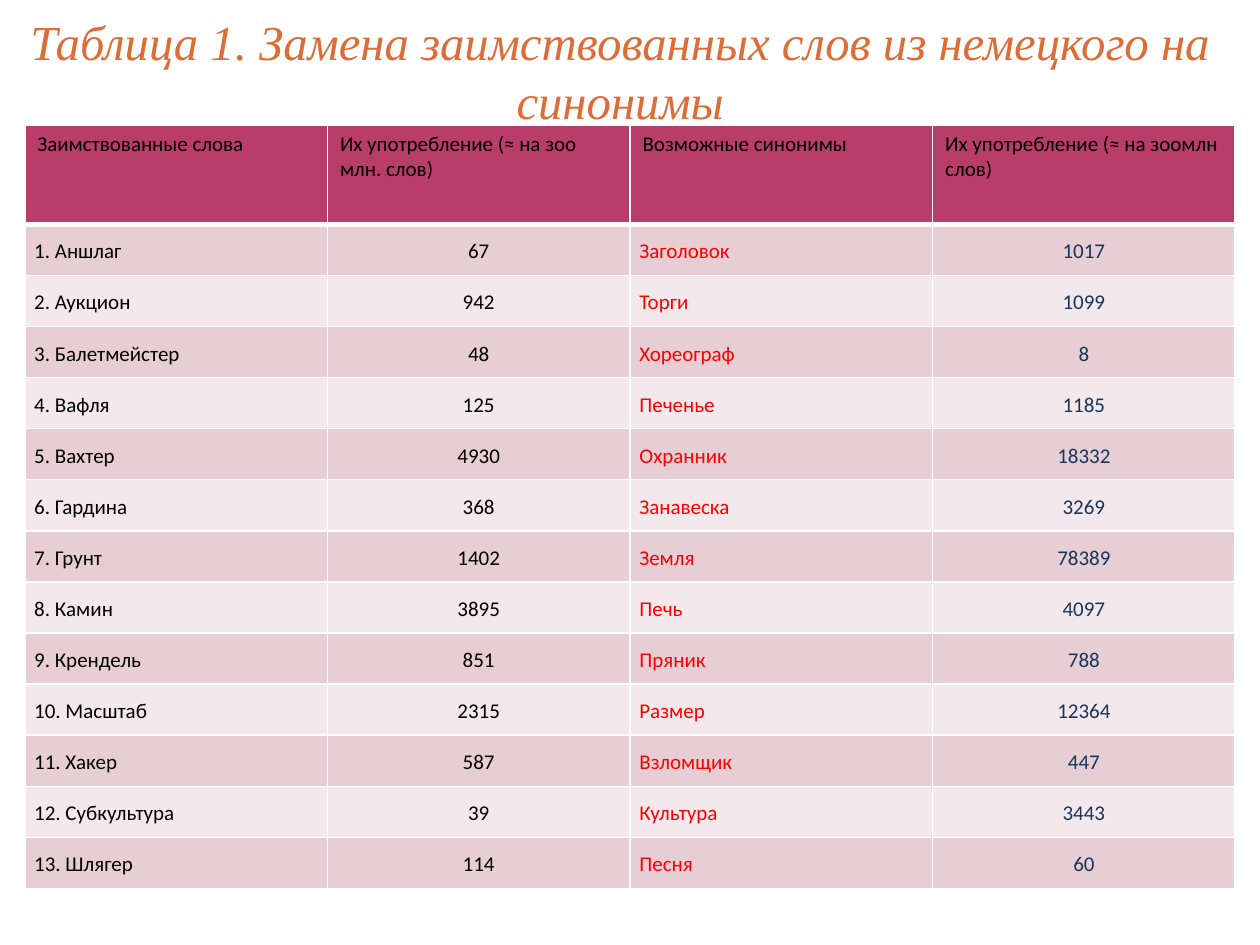
from lxml import etree
from pptx import Presentation
from pptx.dml.color import RGBColor
from pptx.enum.text import MSO_ANCHOR, PP_ALIGN
from pptx.oxml.ns import qn
from pptx.util import Cm, Pt

MIDDLE, TOP = MSO_ANCHOR.MIDDLE, MSO_ANCHOR.TOP
LEFT, CENTER = PP_ALIGN.LEFT, PP_ALIGN.CENTER

TITLE = "Таблица 1. Замена заимствованных слов из немецкого на синонимы"
HEADINGS = (
    "Заимствованные слова",
    "Их употребление (≈ на зоо млн. слов)",
    "Возможные синонимы",
    "Их употребление (≈ на зоомлн слов)",
)
WORDS = [
    ("Аншлаг", 67, "Заголовок", 1017),
    ("Аукцион", 942, "Торги", 1099),
    ("Балетмейстер", 48, "Хореограф", 8),
    ("Вафля", 125, "Печенье", 1185),
    ("Вахтер", 4930, "Охранник", 18332),
    ("Гардина", 368, "Занавеска", 3269),
    ("Грунт", 1402, "Земля", 78389),
    ("Камин", 3895, "Печь", 4097),
    ("Крендель", 851, "Пряник", 788),
    ("Масштаб", 2315, "Размер", 12364),
    ("Хакер", 587, "Взломщик", 447),
    ("Субкультура", 39, "Культура", 3443),
    ("Шлягер", 114, "Песня", 60),
]
COLUMN_COLORS = ("000000", "000000", "FF0000", "16365C")
COLUMN_ALIGNMENTS = (LEFT, CENTER, LEFT, CENTER)
HEADING_FILL = "B83D68"
BAND_FILLS = ("E6CED4", "F3E8EB")
HEADING_HEIGHT, ROW_HEIGHT = Cm(2), Cm(1.03)
TABLE_WIDTH = Cm(24.4)


def rgb(value):
    return RGBColor.from_string(value)


def set_font(paragraph, name, size, color, italic=False):
    font = paragraph.runs[0].font
    font.name, font.size = name, Pt(size)
    font.bold, font.italic = False, italic
    font.color.rgb = rgb(color)


def set_borders(cell, **widths):
    """Draw white cell borders; widths are points by side (L, R, T, B)."""
    properties = cell._tc.get_or_add_tcPr()
    for index, (side, width) in enumerate(widths.items()):
        line = etree.Element(qn(f"a:ln{side}"), w=str(Pt(width)))
        fill = etree.SubElement(line, qn("a:solidFill"))
        etree.SubElement(fill, qn("a:srgbClr"), val="FFFFFF")
        properties.insert(index, line)


def fill_cell(cell, text, fill, color, alignment, anchor):
    cell.fill.solid()
    cell.fill.fore_color.rgb = rgb(fill)
    cell.vertical_anchor = anchor
    cell.text_frame.text = text
    paragraph = cell.text_frame.paragraphs[0]
    paragraph.alignment = alignment
    set_font(paragraph, "Calibri", 12, color)
    return paragraph


def add_title(slide):
    title = slide.shapes.title
    title.left, title.top = Cm(0.3), Cm(0.63)
    title.width, title.height = Cm(24.4), Cm(1.88)
    frame = title.text_frame
    frame.text = TITLE
    frame.word_wrap = True
    frame.vertical_anchor = MIDDLE
    frame.margin_left = frame.margin_right = Cm(0.25)
    frame.margin_top, frame.margin_bottom = Cm(0), Cm(0.3)
    paragraph = frame.paragraphs[0]
    paragraph.alignment = CENTER
    set_font(paragraph, "Times New Roman", 27.9, "DE6C36", italic=True)


def add_word_table(slide):
    table = slide.shapes.add_table(
        len(WORDS) + 1, len(HEADINGS), Cm(0.5), Cm(2.52),
        TABLE_WIDTH, HEADING_HEIGHT + ROW_HEIGHT * len(WORDS),
    ).table
    table.rows[0].height = HEADING_HEIGHT
    for column, heading in enumerate(HEADINGS):
        table.columns[column].width = TABLE_WIDTH // len(HEADINGS)
        cell = table.cell(0, column)
        fill_cell(cell, heading, HEADING_FILL, "000000", LEFT, TOP)
        set_borders(cell, L=1, R=1, T=1, B=3)

    for number, (word, *others) in enumerate(WORDS, start=1):
        table.rows[number].height = ROW_HEIGHT
        fill = BAND_FILLS[(number - 1) % 2]
        for column, value in enumerate((f"{number}. {word}", *others)):
            cell = table.cell(number, column)
            paragraph = fill_cell(cell, str(value), fill, COLUMN_COLORS[column],
                                  COLUMN_ALIGNMENTS[column], MIDDLE)
            paragraph.line_spacing = 1.15
            cell.margin_left = cell.margin_right = Cm(0.19)
            cell.margin_top = cell.margin_bottom = 0
            set_borders(cell, L=1, R=1, T=3 if number == 1 else 1, B=1)


def main():
    presentation = Presentation()
    presentation.slide_width, presentation.slide_height = Cm(25.4), Cm(19.05)
    slide = presentation.slides.add_slide(presentation.slide_layouts[5])
    add_title(slide)
    add_word_table(slide)
    presentation.save("out.pptx")


if __name__ == "__main__":
    main()
